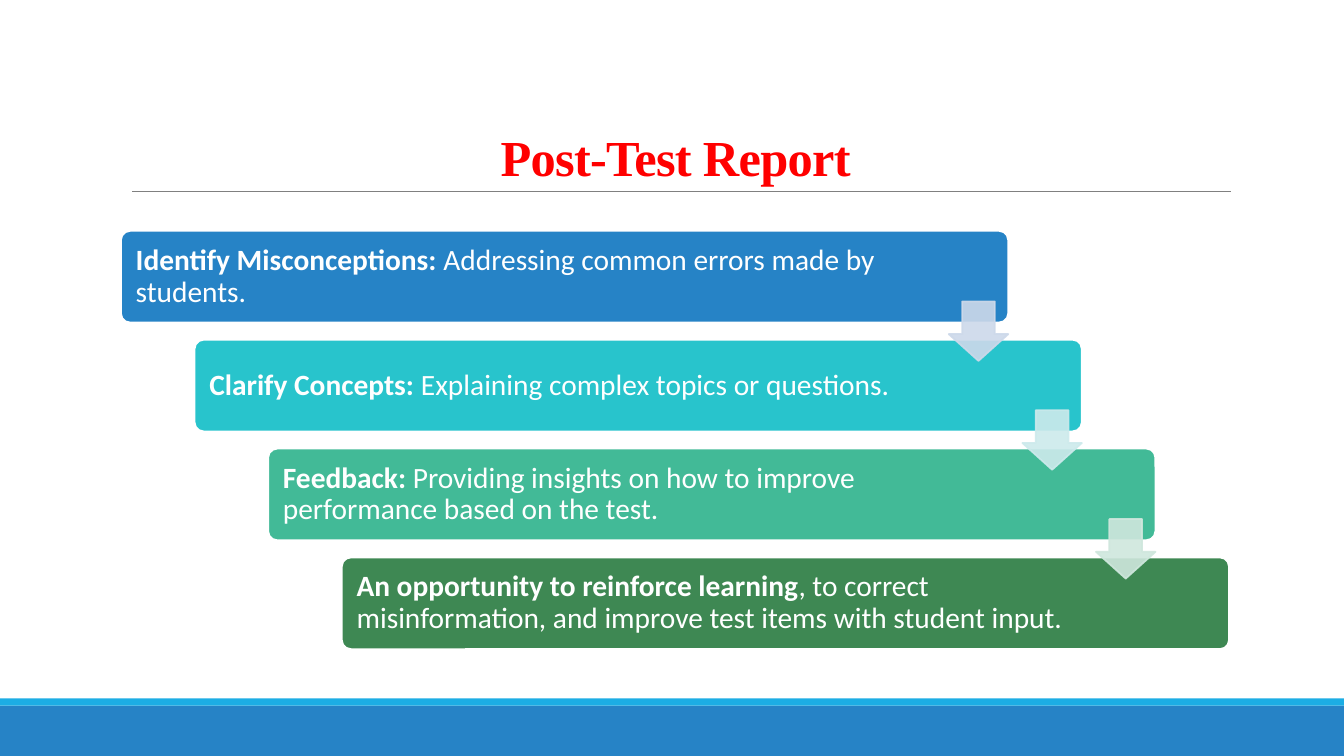
from dataclasses import dataclass

from lxml.etree import SubElement
from pptx import Presentation
from pptx.dml.color import RGBColor
from pptx.enum.shapes import MSO_CONNECTOR, MSO_SHAPE
from pptx.enum.text import MSO_ANCHOR, MSO_AUTO_SIZE, PP_ALIGN
from pptx.oxml.ns import qn
from pptx.util import Inches, Pt


@dataclass(frozen=True)
class Theme:
    title_font: str = "Times New Roman"
    body_font: str = "Calibri"
    title_size: float = 36
    body_size: float = 21
    title: str = "FF0000"
    white: str = "FFFFFF"
    rule: str = "808080"
    band: str = "2683C6"
    accent: str = "1CADE4"
    steps: tuple = ("2683C6", "28C4CC", "42BA97", "3E8853")
    arrows: tuple = ("CDD9EA", "CDEAEC", "CFE7DD")


theme = Theme()


def add_filled_shape(kind, left, top, width, height, color):
    shape = slide.shapes.add_shape(
        kind, Inches(left), Inches(top), Inches(width), Inches(height))
    shape.shadow.inherit = False
    shape.fill.solid()
    shape.fill.fore_color.rgb = RGBColor.from_string(color)
    shape.line.fill.background()
    return shape


def style_run(run, font, size, color, bold):
    run.font.name = font
    run.font.size = Pt(size)
    run.font.color.rgb = RGBColor.from_string(color)
    run.font.bold = bold


presentation = Presentation()
presentation.slide_width = Inches(13.33)
presentation.slide_height = Inches(7.5)
slide = presentation.slides.add_slide(presentation.slide_layouts[5])

# Footer bands and title rule
add_filled_shape(MSO_SHAPE.RECTANGLE, 0, 7, 13.33, 0.5, theme.band)
add_filled_shape(MSO_SHAPE.RECTANGLE, 0, 6.93, 13.33, 0.07, theme.accent)
rule = slide.shapes.add_connector(
    MSO_CONNECTOR.STRAIGHT, Inches(1.31), Inches(1.9), Inches(12.21), Inches(1.9))
rule.line.color.rgb = RGBColor.from_string(theme.rule)
rule.line.width = Pt(0.5)
SubElement(rule._element.spPr, qn("a:effectLst"))

# Title
title = slide.shapes.title
title.left, title.top = Inches(1.2), Inches(0.31)
title.width, title.height = Inches(11), Inches(1.59)
title.text_frame.text = "Post-Test Report"
title.text_frame.auto_size = MSO_AUTO_SIZE.NONE
title.text_frame.vertical_anchor = MSO_ANCHOR.BOTTOM
paragraph = title.text_frame.paragraphs[0]
paragraph.alignment = PP_ALIGN.CENTER
paragraph.line_spacing = 0.85
style_run(paragraph.runs[0], theme.title_font, theme.title_size, theme.title, True)
paragraph.runs[0].font._element.set("spc", "-50")

# Staircase of steps: heading, detail, right margin of the text
steps = [
    ("Identify Misconceptions: ", "Addressing common errors made by students.", 1.12),
    ("Clarify Concepts: ", "Explaining complex topics or questions.", 1.47),
    ("Feedback: ",
     "Providing insights on how to improve performance based on the test.", 1.47),
    ("An opportunity to reinforce learning",
     ", to correct misinformation, and improve test items with student input.", 1.47),
]
STEP_LEFT, STEP_TOP = 1.2, 2.29
STEP_WIDTH, STEP_HEIGHT = 8.8, 0.91
SHIFT_X, SHIFT_Y = 0.73, 1.08
ARROW_SIZE = 0.59

for index, (heading, detail, right_margin) in enumerate(steps):
    step = add_filled_shape(
        MSO_SHAPE.ROUNDED_RECTANGLE,
        STEP_LEFT + index * SHIFT_X, STEP_TOP + index * SHIFT_Y,
        STEP_WIDTH, STEP_HEIGHT, theme.steps[index])
    step.adjustments[0] = 0.1
    step.line.color.rgb = RGBColor.from_string(theme.white)
    step.line.width = Pt(1.25)

    frame = step.text_frame
    frame.word_wrap = True
    frame.vertical_anchor = MSO_ANCHOR.MIDDLE
    frame.margin_left, frame.margin_right = Inches(0.12), Inches(right_margin)
    paragraph = frame.paragraphs[0]
    paragraph.alignment = PP_ALIGN.LEFT
    paragraph.line_spacing = 0.9
    for text, bold in ((heading, True), (detail, False)):
        run = paragraph.add_run()
        run.text = text
        style_run(run, theme.body_font, theme.body_size, theme.white, bold)

# Each arrow straddles the gap below its step, flush with the step's right edge
for index, color in enumerate(theme.arrows):
    arrow = add_filled_shape(
        MSO_SHAPE.DOWN_ARROW,
        STEP_LEFT + STEP_WIDTH - ARROW_SIZE + index * SHIFT_X,
        STEP_TOP + 0.7 + index * SHIFT_Y,
        ARROW_SIZE, ARROW_SIZE, color)
    arrow.adjustments[0], arrow.adjustments[1] = 0.55, 0.45
    arrow.line.color.rgb = RGBColor.from_string(color)
    arrow.line.width = Pt(1.25)
    for color_element in arrow._element.spPr.iter(qn("a:srgbClr")):
        SubElement(color_element, qn("a:alpha")).set("val", "90000")

presentation.save("out.pptx")
